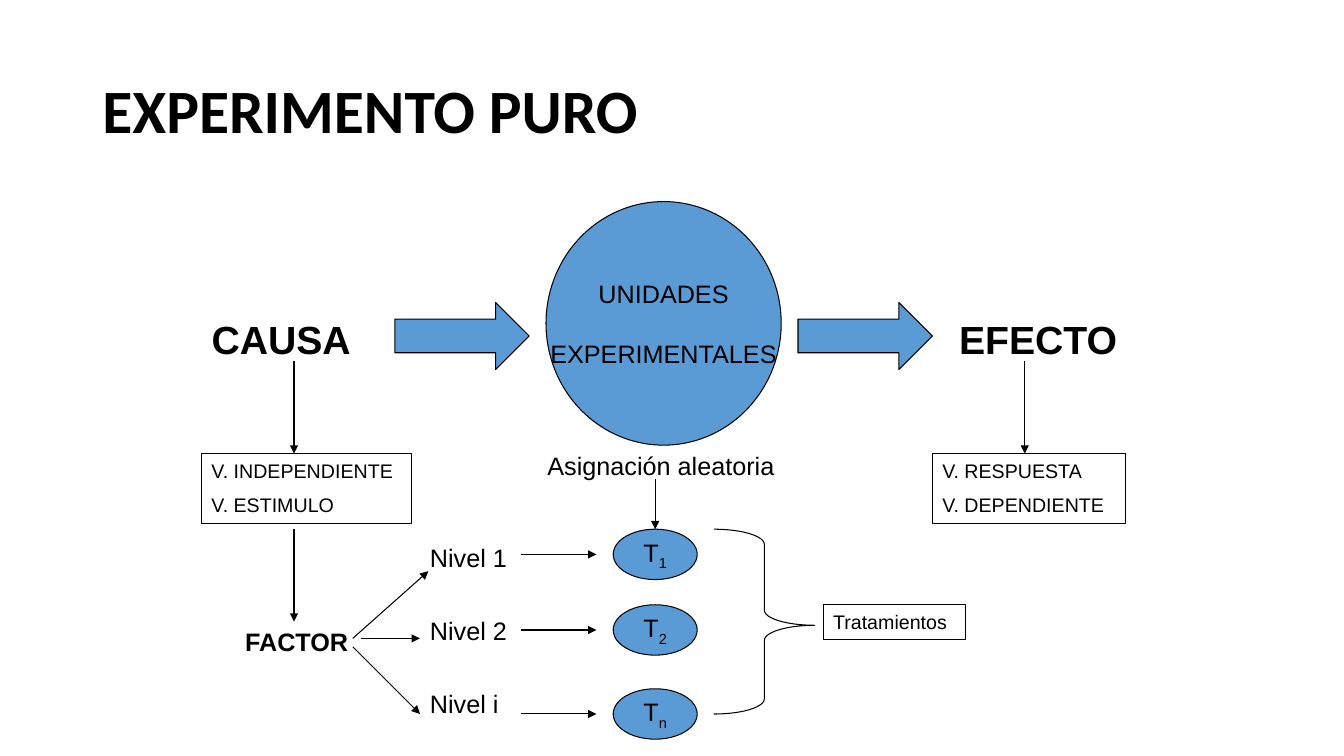
"""Build the slide that explains a true experiment as a cause and effect diagram."""
from dataclasses import dataclass

from lxml import etree
from pptx import Presentation
from pptx.dml.color import RGBColor
from pptx.enum.shapes import MSO_CONNECTOR, MSO_SHAPE
from pptx.enum.text import MSO_ANCHOR, MSO_AUTO_SIZE, PP_ALIGN
from pptx.oxml.ns import qn
from pptx.util import Inches, Pt


@dataclass(frozen=True)
class Theme:
    ink: RGBColor = RGBColor(0x00, 0x00, 0x00)
    accent: RGBColor = RGBColor(0x5B, 0x9B, 0xD5)
    title_font: str = "Calibri"
    body_font: str = "Arial"
    title: int = 44
    heading: int = 28
    body: int = 18
    small: int = 14
    stroke: float = 0.75


THEME = Theme()
COLUMNS, ROWS = 160, 90
WIDTH, HEIGHT = Inches(13.333), Inches(7.5)

TITLE = ("EXPERIMENTO PURO", (11, 4.8, 138, 17.4))
UNITS = (["UNIDADES", "EXPERIMENTALES"], (65, 24, 28, 29))
HEADINGS = [("CAUSA", (24, 37, 21, 6.84)), ("EFECTO", (113, 37, 25, 6.84))]
LABELS = [
    (["FACTOR"], (28, 74, 17, 4.8), True),
    (["Nivel 1", "Nivel 2", "Nivel i"], (50, 64, 20, 22.8), False),
    (["Asignación aleatoria"], (64, 53, 31, 4.8), False),
]
BOXES = [
    (["V. INDEPENDIENTE", "V. ESTIMULO"], (24, 54, 25, 8.3)),
    (["V. RESPUESTA", "V. DEPENDIENTE"], (111, 54, 23, 8.3)),
    (["Tratamientos"], (98, 72, 17, 4.1)),
]
TREATMENTS = [("1", 66), ("2", 75), ("n", 85)]
BLOCK_ARROW_COLUMNS = [47, 95]
BRACE = (85, 63, 12, 22)
ARROWS = [
    (35, 43, 35, 54),
    (35, 63, 35, 74),
    (122, 43, 122, 54),
    (78, 57, 78, 63),
    (43, 76, 50, 76),
    (42, 76, 51, 68),
    (42, 77, 50, 85),
]


def place(*cells):
    """Turn alternating columns and rows into slide lengths."""
    units = (WIDTH / COLUMNS, HEIGHT / ROWS)
    return [round(cell * units[index % 2]) for index, cell in enumerate(cells)]


def write(shape, lines, *, size=THEME.body, font=THEME.body_font, bold=False,
          align=PP_ALIGN.LEFT, anchor=MSO_ANCHOR.TOP, gap=7.5, wrap=True,
          line_spacing=None, subscript=None):
    """Write one paragraph per line, with an optional subscript after each."""
    frame = shape.text_frame
    frame.auto_size = MSO_AUTO_SIZE.NONE
    frame.word_wrap = wrap
    frame.vertical_anchor = anchor
    for index, line in enumerate(lines):
        paragraph = frame.add_paragraph() if index else frame.paragraphs[0]
        paragraph.alignment = align
        paragraph.space_before = Pt(gap if index else 0)
        if line_spacing:
            paragraph.line_spacing = line_spacing
        for text in filter(None, (line, subscript)):
            run = paragraph.add_run()
            run.text = text
            run.font.size = Pt(size)
            run.font.name = font
            run.font.bold = bold
            run.font.color.rgb = THEME.ink
        if subscript:
            run._r.get_or_add_rPr().set("baseline", "-25000")


def add_outline(slide, kind, cells, fill=None):
    """Add a preset shape with a thin dark outline."""
    shape = slide.shapes.add_shape(kind, *place(*cells))
    shape.shadow.inherit = False
    shape.line.color.rgb = THEME.ink
    shape.line.width = Pt(THEME.stroke)
    if fill is None:
        shape.fill.background()
    else:
        shape.fill.solid()
        shape.fill.fore_color.rgb = fill
    return shape


def add_label(slide, lines, cells, **text_format):
    """Add a text box on the grid."""
    write(slide.shapes.add_textbox(*place(*cells)), lines, **text_format)


def add_arrow(slide, cells):
    """Add a straight arrow between two grid points."""
    arrow = slide.shapes.add_connector(MSO_CONNECTOR.STRAIGHT, *place(*cells))
    arrow.line.color.rgb = THEME.ink
    arrow.line.width = Pt(THEME.stroke)
    etree.SubElement(arrow.line._get_or_add_ln(), qn("a:tailEnd"), type="triangle")
    etree.SubElement(arrow._element.spPr, qn("a:effectLst"))


def main():
    """Assemble and save the slide."""
    presentation = Presentation()
    presentation.slide_width, presentation.slide_height = WIDTH, HEIGHT
    slide = presentation.slides.add_slide(presentation.slide_layouts[5])

    title, cells = TITLE
    heading = slide.shapes.title
    heading.left, heading.top, heading.width, heading.height = place(*cells)
    write(heading, [title], size=THEME.title, font=THEME.title_font, bold=True,
          anchor=MSO_ANCHOR.MIDDLE, line_spacing=0.9)

    centred = {"align": PP_ALIGN.CENTER, "anchor": MSO_ANCHOR.MIDDLE, "wrap": False}
    lines, cells = UNITS
    circle = add_outline(slide, MSO_SHAPE.OVAL, cells, THEME.accent)
    write(circle, lines, gap=21, **centred)

    for column in BLOCK_ARROW_COLUMNS:
        add_outline(slide, MSO_SHAPE.RIGHT_ARROW, (column, 36, 16, 8), THEME.accent)
    for text, cells in HEADINGS:
        add_label(slide, [text], cells, size=THEME.heading, bold=True)
    for lines, cells, bold in LABELS:
        add_label(slide, lines, cells, bold=bold, gap=30.6)
    for lines, cells in BOXES:
        write(add_outline(slide, MSO_SHAPE.RECTANGLE, cells), lines, size=THEME.small)

    for subscript, row in TREATMENTS:
        oval = add_outline(slide, MSO_SHAPE.OVAL, (73, row - 3, 10, 6), THEME.accent)
        write(oval, ["T"], subscript=subscript, **centred)
        add_arrow(slide, (62, row, 71, row))
    for cells in ARROWS:
        add_arrow(slide, cells)

    brace = add_outline(slide, MSO_SHAPE.RIGHT_BRACE, BRACE)
    brace.adjustments[0], brace.adjustments[1] = 0.15, 0.52
    presentation.save("out.pptx")


if __name__ == "__main__":
    main()
